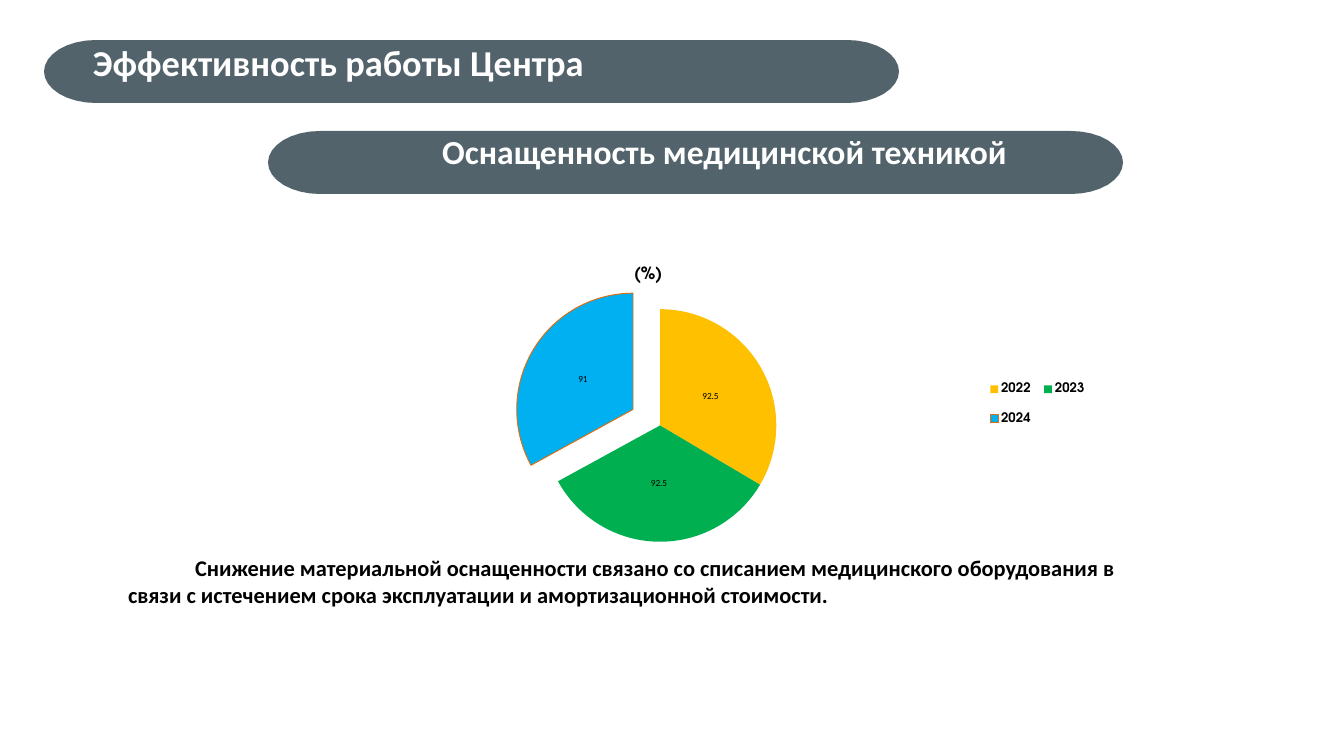
from math import cos, pi, sin

from lxml import etree
from pptx import Presentation
from pptx.chart.data import CategoryChartData
from pptx.dml.color import RGBColor
from pptx.enum.chart import XL_CHART_TYPE, XL_LABEL_POSITION, XL_LEGEND_POSITION
from pptx.enum.text import MSO_ANCHOR, MSO_AUTO_SIZE, PP_ALIGN
from pptx.oxml.ns import qn
from pptx.util import Pt

PIE = XL_CHART_TYPE.PIE
CENTER = XL_LABEL_POSITION.CENTER
RIGHT = XL_LEGEND_POSITION.RIGHT
TOP = MSO_ANCHOR.TOP
FIXED = MSO_AUTO_SIZE.NONE
LEFT, MIDDLE = PP_ALIGN.LEFT, PP_ALIGN.CENTER

SLATE = RGBColor(0x41, 0x53, 0x5C)
WHITE = RGBColor(0xFF, 0xFF, 0xFF)
BLACK = RGBColor(0, 0, 0)
GOLD = RGBColor(0xFF, 0xC0, 0x00)
GREEN = RGBColor(0x00, 0xB0, 0x50)
BLUE = RGBColor(0x00, 0xB0, 0xF0)
ORANGE = RGBColor(0xE4, 0x6C, 0x0A)

BODY, LABEL = "Calibri", "TeX Gyre Adventor"
SCALE = 914400 / 67.2

TITLE = "Эффективность работы Центра"
TOPIC = "Оснащенность медицинской техникой"
NOTE = ("Снижение материальной оснащенности связано со списанием медицинского "
        "оборудования в связи с истечением срока эксплуатации и "
        "амортизационной стоимости.")
UNIT = "(%)"
# year, value, colour, explosion in percent
YEARS = [("2022", 92.5, GOLD, 0), ("2023", 92.5, GREEN, 0), ("2024", 91, BLUE, 27)]
SPREAD = 7

# left, top, width, height in px
TITLE_BOX = (44, 40, 855, 63)
TOPIC_BOX = (268, 131, 855, 63)
CHART_BOX = (241, 200, 913, 351)
PLOT_BOX = (325, 301, 670, 249)
UNIT_BOX = (631, 262, 0, 0)
KEY_BOX = (981, 366, 112, 76)
NOTE_BOX = (121, 551, 1023, 61)
CAP = 52


def px(n):
    return round(n * SCALE)


def style(font, **values):
    color = values.pop("color", BLACK)
    for key, value in values.items():
        setattr(font, key, value)
    font.color.rgb = color


def write(frame, text, size, color, align, inset):
    values = dict(text=text, word_wrap=True, auto_size=FIXED, vertical_anchor=TOP,
                  margin_left=px(inset), margin_top=0, margin_right=0, margin_bottom=0)
    for key, value in values.items():
        setattr(frame, key, value)
    line = frame.paragraphs[0]
    line.alignment = align
    style(line.runs[0].font, name=BODY, size=Pt(size), bold=True, color=color)


def add_banner(slide, box):
    """Draw a bar with half-ellipse ends."""
    left, top, width, height = box
    steps = 16
    dots = []
    for start, x in ((-pi / 2, left + width - CAP), (pi / 2, left + CAP)):
        for i in range(steps + 1):
            turn = start + pi * i / steps
            dots.append((px(x + CAP * cos(turn)),
                         px(top + height / 2 * (1 + sin(turn)))))
    pen = slide.shapes.build_freeform(*dots[0])
    pen.add_line_segments(dots[1:], close=True)
    bar = pen.convert_to_shape()
    bar.shadow.inherit = False
    bar.fill.solid()
    bar.fill.fore_color.rgb = SLATE
    bar.line.fill.background()
    tint = bar.element.find(".//" + qn("a:srgbClr"))
    etree.SubElement(tint, qn("a:alpha")).set("val", "90000")
    return bar


def set_layout(parent, index, box, inner=False):
    """Place a chart part by hand, as fractions of the chart frame."""
    for old in parent.findall(qn("c:layout")):
        parent.remove(old)
    layout = etree.Element(qn("c:layout"))
    parent.insert(index, layout)
    manual = etree.SubElement(layout, qn("c:manualLayout"))
    x, y, w, h = box
    left, top, width, height = CHART_BOX
    marks = [("layoutTarget", "inner")] if inner else []
    marks += [("xMode", "edge"), ("yMode", "edge"),
              ("x", (x - left) / width), ("y", (y - top) / height)]
    if w:
        marks += [("w", w / width), ("h", h / height)]
    for tag, value in marks:
        text = value if isinstance(value, str) else f"{value:.3f}"
        etree.SubElement(manual, qn("c:" + tag)).set("val", text)


def explode(parent, before, amount):
    node = etree.Element(qn("c:explosion"))
    node.set("val", str(amount))
    parent.find(qn(before)).addprevious(node)


def add_pie(slide):
    data = CategoryChartData()
    data.categories = [year for year, *_ in YEARS]
    data.add_series(UNIT, [value for _, value, *_ in YEARS])
    chart = slide.shapes.add_chart(PIE, *map(px, CHART_BOX), data).chart
    style(chart.font, name=BODY, size=Pt(18))

    chart.has_title = True
    frame = chart.chart_title.text_frame
    frame.text = UNIT
    style(frame.paragraphs[0].runs[0].font, name=LABEL, size=Pt(18), bold=True)
    set_layout(chart.element.find(".//" + qn("c:title")), 1, UNIT_BOX)

    chart.has_legend = True
    key = chart.legend
    key.position = RIGHT
    key.include_in_layout = False
    style(key.font, name=LABEL, size=Pt(14), bold=True)
    set_layout(chart.element.find(".//" + qn("c:legend")), 1, KEY_BOX)

    plot = chart.plots[0]
    plot.vary_by_categories = True
    plot.has_data_labels = True
    labels = plot.data_labels
    labels.show_value = True
    labels.show_percentage = False
    labels.position = CENTER
    style(labels.font, name=BODY, size=Pt(10))
    set_layout(chart.element.find(".//" + qn("c:plotArea")), 0, PLOT_BOX, inner=True)

    series = plot.series[0]
    for i, (_, _, color, amount) in enumerate(YEARS):
        look = series.points[i].format
        look.fill.solid()
        look.fill.fore_color.rgb = color
        if amount:
            look.line.color.rgb = ORANGE
            look.line.width = Pt(1)
        else:
            look.line.fill.background()
    ser = chart.element.find(".//" + qn("c:ser"))
    for point, (*_, amount) in zip(ser.findall(qn("c:dPt")), YEARS):
        explode(point, "c:spPr", amount)
    explode(ser, "c:dPt", SPREAD)


def main():
    deck = Presentation()
    deck.slide_width, deck.slide_height = px(1344), px(756)
    slide = deck.slides.add_slide(deck.slide_layouts[5])

    bar = add_banner(slide, TITLE_BOX)
    title = slide.shapes.title
    title.left, title.top, title.width, title.height = map(px, TITLE_BOX)
    write(title.text_frame, TITLE, 39, WHITE, LEFT, 49)
    bar.element.addnext(title.element)

    add_pie(slide)
    topic = add_banner(slide, TOPIC_BOX)
    write(topic.text_frame, TOPIC, 36, WHITE, MIDDLE, 58)

    note = slide.shapes.add_textbox(*map(px, NOTE_BOX)).text_frame
    write(note, NOTE, 24, BLACK, LEFT, 7)
    note.margin_right = px(7)
    note.margin_top = note.margin_bottom = px(3)
    note.paragraphs[0].runs[0].font.language_id = None
    note.paragraphs[0]._p.get_or_add_pPr().set("indent", str(px(67)))
    deck.save("out.pptx")


if __name__ == "__main__":
    main()
